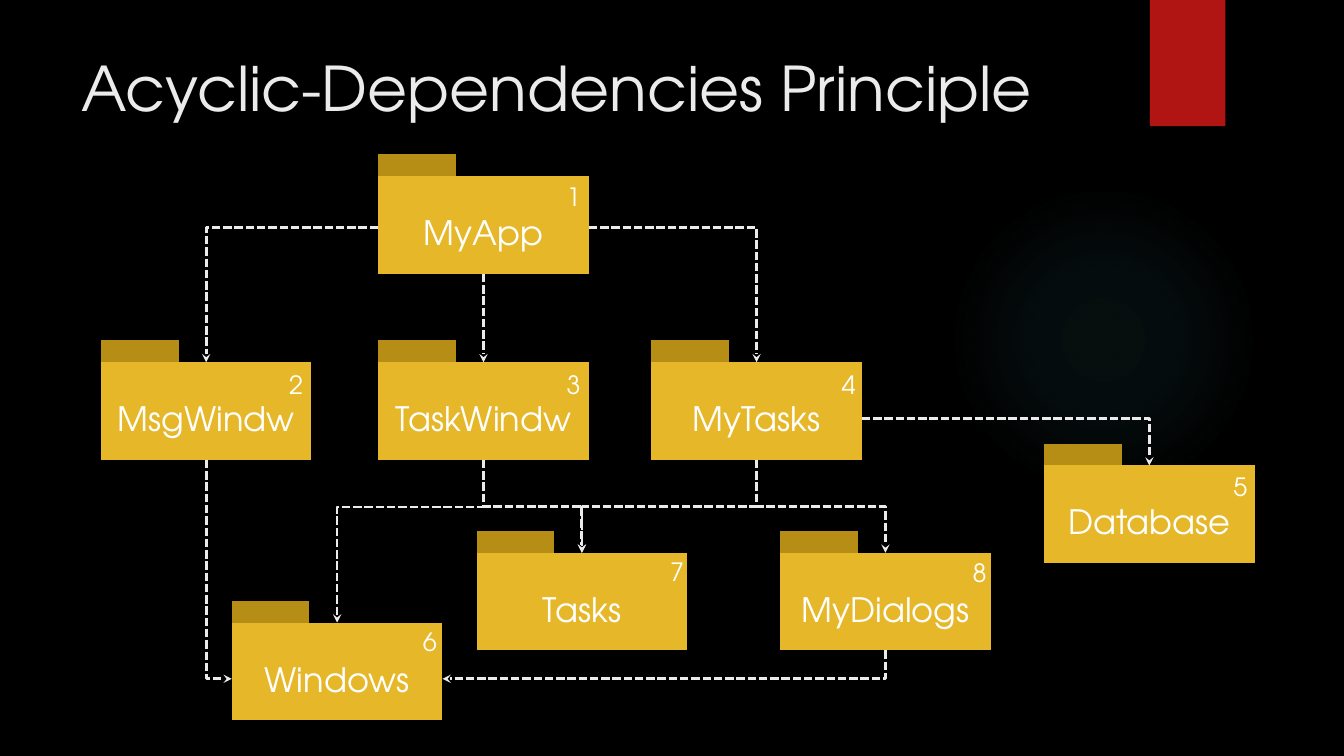
import pptx
import pptx.util
import pptx.dml.color
import pptx.enum.dml
import pptx.enum.shapes
import pptx.enum.text
import pptx.oxml
import pptx.oxml.ns

Cm, Pt = pptx.util.Cm, pptx.util.Pt
SHAPE = pptx.enum.shapes.MSO_SHAPE
ALIGN = pptx.enum.text.PP_ALIGN
qn = pptx.oxml.ns.qn

FONT = "TeX Gyre Adventor"
COLORS = {"back": "000000", "ribbon": "B01513", "glow": "50B9C1", "light": "EBEBEB",
          "tab": "B68E15", "body": "E6B729", "text": "FFFFFF"}

# Package proportions, in cm
BODY_W, BODY_H, BODY_DY = 5.31, 2.46, 0.55
TAB_W, TAB_H = 1.96, 1.78
LABEL_DY = 1.33

# name: left, top, label height, number, number offset x and y
PACKAGES = {
    "MyApp": (9.53, 3.89, 1.04, "1", 4.5, 0.56),
    "MsgWindw": (2.54, 8.58, 1.27, "2", 4.5, 0.61),
    "TaskWindw": (9.53, 8.58, 1.27, "3", 4.5, 0.59),
    "MyTasks": (16.41, 8.58, 1.27, "4", 4.55, 0.59),
    "Database": (26.31, 11.18, 1.27, "5", 4.52, 0.56),
    "MyDialogs": (19.66, 13.38, 1.27, "8", 4.6, 0.54),
    "Tasks": (12.01, 13.38, 1.27, "7", 4.63, 0.51),
    "Windows": (5.84, 15.14, 1.27, "6", 4.57, 0.53),
}

# from, side, to, side, bend position of a three-part elbow
DEPENDENCIES = [
    ("MyApp", "right", "MyTasks", "top", None),
    ("MyApp", "left", "MsgWindw", "top", None),
    ("MyApp", "bottom", "TaskWindw", "top", None),
    ("MyTasks", "right", "Database", "top", None),
    ("MyTasks", "bottom", "MyDialogs", "top", 0.5),
    ("MyTasks", "bottom", "Tasks", "top", 0.5),
    ("TaskWindw", "bottom", "Tasks", "top", 0.5),
    ("TaskWindw", "bottom", "Windows", "top", 0.29),
    ("MsgWindw", "bottom", "Windows", "left", None),
    ("MyDialogs", "bottom", "Windows", "right", None),
]


def rgb(name):
    return pptx.dml.color.RGBColor.from_string(COLORS[name])


def add_block(shapes, kind, left, top, width, height, color):
    sp = shapes.add_shape(kind, Cm(left), Cm(top), Cm(width), Cm(height))
    sp.shadow.inherit = False
    sp.fill.solid()
    sp.fill.fore_color.rgb = rgb(color)
    sp.line.fill.background()
    return sp


def format_text(tf, text, size, color, align=ALIGN.LEFT):
    tf.word_wrap = True
    tf.vertical_anchor = pptx.enum.text.MSO_ANCHOR.TOP
    tf.text = text
    p = tf.paragraphs[0]
    p.alignment = align
    font = p.runs[0].font
    font.name, font.size, font.color.rgb = FONT, Pt(size), rgb(color)


def add_text(shapes, left, top, width, height, text, size, align=ALIGN.LEFT):
    tb = shapes.add_textbox(Cm(left), Cm(top), Cm(width), Cm(height))
    format_text(tb.text_frame, text, size, "text", align)
    return tb


def add_glow(s):
    sp = add_block(s.shapes, SHAPE.OVAL, 23.9, 4.65, 7.82, 7.82, "glow")
    stops = "".join(
        f'<a:gs pos="{pos}000"><a:srgbClr val="{COLORS["glow"]}">'
        f'<a:alpha val="{alpha}000"/></a:srgbClr></a:gs>'
        for pos, alpha in ((0, 7), (36, 6), (69, 0)))
    grad = pptx.oxml.parse_xml(
        f'<a:gradFill {pptx.oxml.ns.nsdecls("a")}><a:gsLst>{stops}</a:gsLst>'
        '<a:path path="circle"><a:fillToRect l="50000" t="50000" r="50000" b="50000"/>'
        '</a:path></a:gradFill>')
    spPr = sp._element.spPr
    spPr.replace(spPr.find(qn("a:solidFill")), grad)


def add_package(s, name):
    left, top, label_h = PACKAGES[name][:3]
    shapes = s.shapes.add_group_shape().shapes
    add_block(shapes, SHAPE.FLOWCHART_PROCESS, left, top, TAB_W, TAB_H, "tab")
    add_block(shapes, SHAPE.FLOWCHART_PROCESS, left, top + BODY_DY, BODY_W, BODY_H, "body")
    add_text(shapes, left, top + LABEL_DY, BODY_W, label_h, name, 24, ALIGN.CENTER)


def add_number(s, name):
    left, top, _, number, dx, dy = PACKAGES[name]
    tb = add_text(s.shapes, left + dx, top + dy, 0.51, 1.02, number, 18)
    tb.text_frame.margin_right = 0


def anchor(name, side):
    left, top, label_h = PACKAGES[name][:3]
    middle = top + LABEL_DY + label_h / 2
    return {"left": (left, middle),
            "right": (left + BODY_W, middle),
            "top": (left + BODY_W / 2, top + BODY_DY),
            "bottom": (left + BODY_W / 2, top + BODY_DY + BODY_H)}[side]


def bend_connector(cxn, down_first, rightward, bend):
    """Turn a connector so that its elbow leaves in the right direction."""
    spPr = cxn._element.spPr
    xfrm, geom = spPr.find(qn("a:xfrm")), spPr.find(qn("a:prstGeom"))
    angle, flip = {(True, True): (270, "flipH"), (True, False): (90, None),
                   (False, True): (0, None), (False, False): (180, "flipV")}[down_first, rightward]
    xfrm.set("rot", str(angle * 60000))
    if flip:
        xfrm.set(flip, "1")
    if bend is None:
        geom.set("prst", "bentConnector2")
    else:
        guide = geom.get_or_add_avLst().makeelement(
            qn("a:gd"), {"name": "adj1", "fmla": f"val {round(bend * 100000)}"})
        geom.find(qn("a:avLst")).append(guide)


def add_dependency(s, source, source_side, target, target_side, bend):
    x1, y1 = anchor(source, source_side)
    x2, y2 = anchor(target, target_side)
    w, h = abs(x2 - x1), abs(y2 - y1)
    down_first = source_side == "bottom"
    straight = w < 0.01
    if down_first and not straight:
        w, h = h, w
    left, top = (x1 + x2 - w) / 2, (y1 + y2 - h) / 2
    kinds = pptx.enum.shapes.MSO_CONNECTOR
    cxn = s.shapes.add_connector(kinds.STRAIGHT if straight else kinds.ELBOW,
                                 Cm(left), Cm(top), Cm(left + w), Cm(top + h))
    if not straight:
        bend_connector(cxn, down_first, x2 > x1, bend)
    cxn.line.color.rgb = rgb("light")
    cxn.line.width = Pt(2)
    cxn.line.dash_style = pptx.enum.dml.MSO_LINE.SQUARE_DOT
    ln = cxn.line._get_or_add_ln()
    ln.append(ln.makeelement(qn("a:tailEnd"), {"type": "stealth"}))
    spPr = cxn._element.spPr
    spPr.append(spPr.makeelement(qn("a:effectLst"), {}))


def main():
    prs = pptx.Presentation()
    prs.slide_width, prs.slide_height = Cm(33.87), Cm(19.05)
    s = prs.slides.add_slide(prs.slide_layouts[5])

    # Background and decoration
    s.background.fill.solid()
    s.background.fill.fore_color.rgb = rgb("back")
    add_glow(s)
    add_block(s.shapes, SHAPE.RECTANGLE, 28.98, 0, 1.9, 3.18, "ribbon")

    # Title
    title = s.shapes.title
    title.left, title.top, title.width, title.height = Cm(1.8), Cm(1.14), Cm(26.14), Cm(3.89)
    format_text(title.text_frame, "Acyclic-Dependencies Principle", 44, "light")

    # Packages, their dependencies and numbers
    for name in PACKAGES:
        add_package(s, name)
    for dependency in DEPENDENCIES:
        add_dependency(s, *dependency)
    for name in sorted(PACKAGES, key=lambda n: PACKAGES[n][3]):
        add_number(s, name)

    prs.save("out.pptx")


if __name__ == "__main__":
    main()
